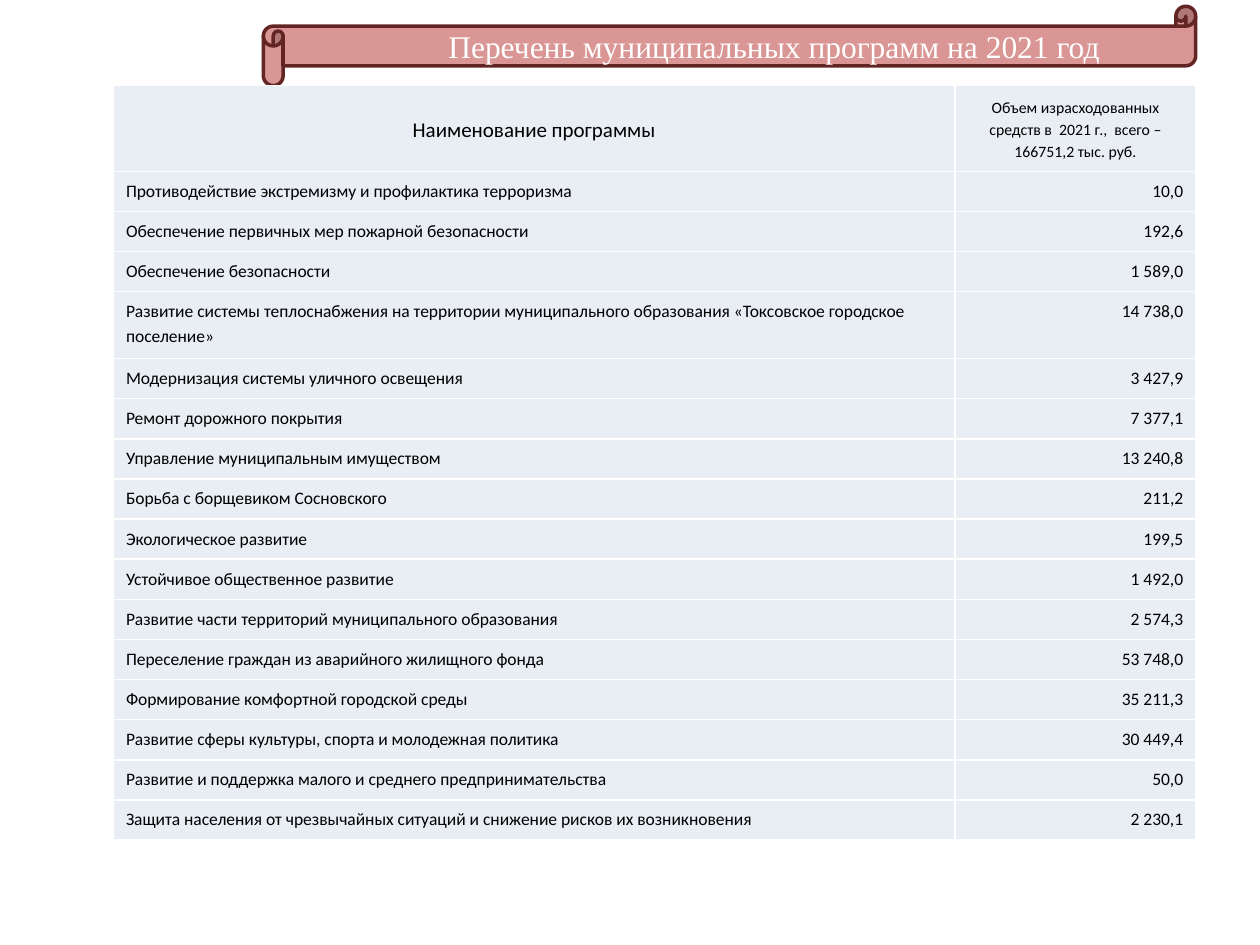
"""Build the slide listing municipal programmes and their 2021 spending."""
from lxml.etree import SubElement
from pptx import Presentation
from pptx.dml.color import RGBColor
from pptx.enum.shapes import MSO_SHAPE as SHAPE
from pptx.enum.text import MSO_ANCHOR as ANCHOR, PP_ALIGN as ALIGN
from pptx.oxml.ns import qn
from pptx.util import Inches, Pt

WHITE = RGBColor(0xFF, 0xFF, 0xFF)
BLACK = RGBColor(0x00, 0x00, 0x00)
ROSE = RGBColor(0xD9, 0x96, 0x94)
MAROON = RGBColor(0x63, 0x25, 0x23)
PALE = RGBColor(0xE9, 0xED, 0xF4)

HEADER = ("Наименование программы",
          "Объем израсходованных средств в  2021 г.,  всего – 166751,2 тыс. руб.")
PROGRAMS = [
    ("Противодействие экстремизму и профилактика терроризма", "10,0"),
    ("Обеспечение первичных мер пожарной безопасности", "192,6"),
    ("Обеспечение безопасности", "1 589,0"),
    ("Развитие системы теплоснабжения на территории муниципального образования "
     "«Токсовское городское поселение»", "14 738,0"),
    ("Модернизация системы уличного освещения", "3 427,9"),
    ("Ремонт дорожного покрытия", "7 377,1"),
    ("Управление муниципальным имуществом", "13 240,8"),
    ("Борьба с борщевиком Сосновского", "211,2"),
    ("Экологическое развитие", "199,5"),
    ("Устойчивое общественное развитие", "1 492,0"),
    ("Развитие части территорий муниципального образования", "2 574,3"),
    ("Переселение граждан из аварийного жилищного фонда", "53 748,0"),
    ("Формирование комфортной городской среды", "35 211,3"),
    ("Развитие сферы культуры, спорта и молодежная политика", "30 449,4"),
    ("Развитие и поддержка малого и среднего предпринимательства", "50,0"),
    ("Защита населения от чрезвычайных ситуаций и снижение рисков их возникновения",
     "2 230,1"),
]
ROWS = [HEADER] + PROGRAMS
UNINDENTED = {HEADER[1], PROGRAMS[3][0], PROGRAMS[-1][0]}
HEADER_SIZES = (12, 9)


def write(tf, text, para, font, color):
    p = tf.paragraphs[0]
    r = p.add_run()
    r.text = text
    for target, values in ((p, para), (r.font, font)):
        for name, value in values.items():
            setattr(target, name, value)
    r.font.color.rgb = color
    return p


def add_borders(cell):
    tc_pr = cell._tc.get_or_add_tcPr()
    for i, side in enumerate(("lnL", "lnR", "lnT", "lnB")):
        ln = SubElement(tc_pr, qn(f"a:{side}"), w=str(Pt(1)))
        fill = SubElement(ln, qn("a:solidFill"))
        SubElement(fill, qn("a:srgbClr"), val=str(WHITE))
        tc_pr.insert(i, ln)


prs = Presentation()
prs.slide_width, prs.slide_height = Inches(10), Inches(7.5)
s = prs.slides.add_slide(prs.slide_layouts[6])

top, band = Inches(0.05), Inches(0.63)
sp = s.shapes.add_shape(SHAPE.HORIZONTAL_SCROLL, Inches(2.09), top, Inches(7.4), band)
sp.adjustments[0] = 0.25
sp.shadow.inherit = False
sp.fill.solid()
sp.fill.fore_color.rgb = ROSE
sp.line.color.rgb = MAROON
sp.line.width = Pt(2)

tf = s.shapes.add_textbox(Inches(3.19), top, Inches(5.91), band).text_frame
tf.word_wrap = True
tf.vertical_anchor = ANCHOR.MIDDLE
write(tf, "Перечень муниципальных программ на 2021 год",
      {"alignment": ALIGN.CENTER}, {"name": "Times New Roman", "size": Pt(18)}, WHITE)

col_widths = Inches(6.68), Inches(1.91)
table_height, header_height, double_height = Inches(5.99), Inches(0.68), Inches(0.53)
row_height = (table_height - header_height - double_height) // (len(ROWS) - 2)
table = s.shapes.add_table(len(ROWS), len(col_widths), Inches(0.9), top + band,
                           sum(col_widths), table_height).table
for col, width in zip(table.columns, col_widths):
    col.width = width
for row in table.rows:
    row.height = row_height
table.rows[0].height = header_height
table.rows[4].height = double_height

for i, row in enumerate(ROWS):
    for j, text in enumerate(row):
        cell = table.cell(i, j)
        cell.fill.solid()
        cell.fill.fore_color.rgb = PALE
        add_borders(cell)
        cell.vertical_anchor = ANCHOR.TOP if i else ANCHOR.MIDDLE
        align = (ALIGN.LEFT, ALIGN.RIGHT)[j] if i else ALIGN.CENTER
        size = 10 if i else HEADER_SIZES[j]
        p = write(cell.text_frame, text,
                  {"alignment": align, "line_spacing": 1.15, "space_after": Pt(10)},
                  {"name": "Calibri", "size": Pt(size), "bold": False}, BLACK)
        if text not in UNINDENTED:
            p_pr = p._p.get_or_add_pPr()
            p_pr.set("marL", str(Inches(0.38)))
            p_pr.set("indent", str(-Inches(0.38)))

prs.save("out.pptx")
